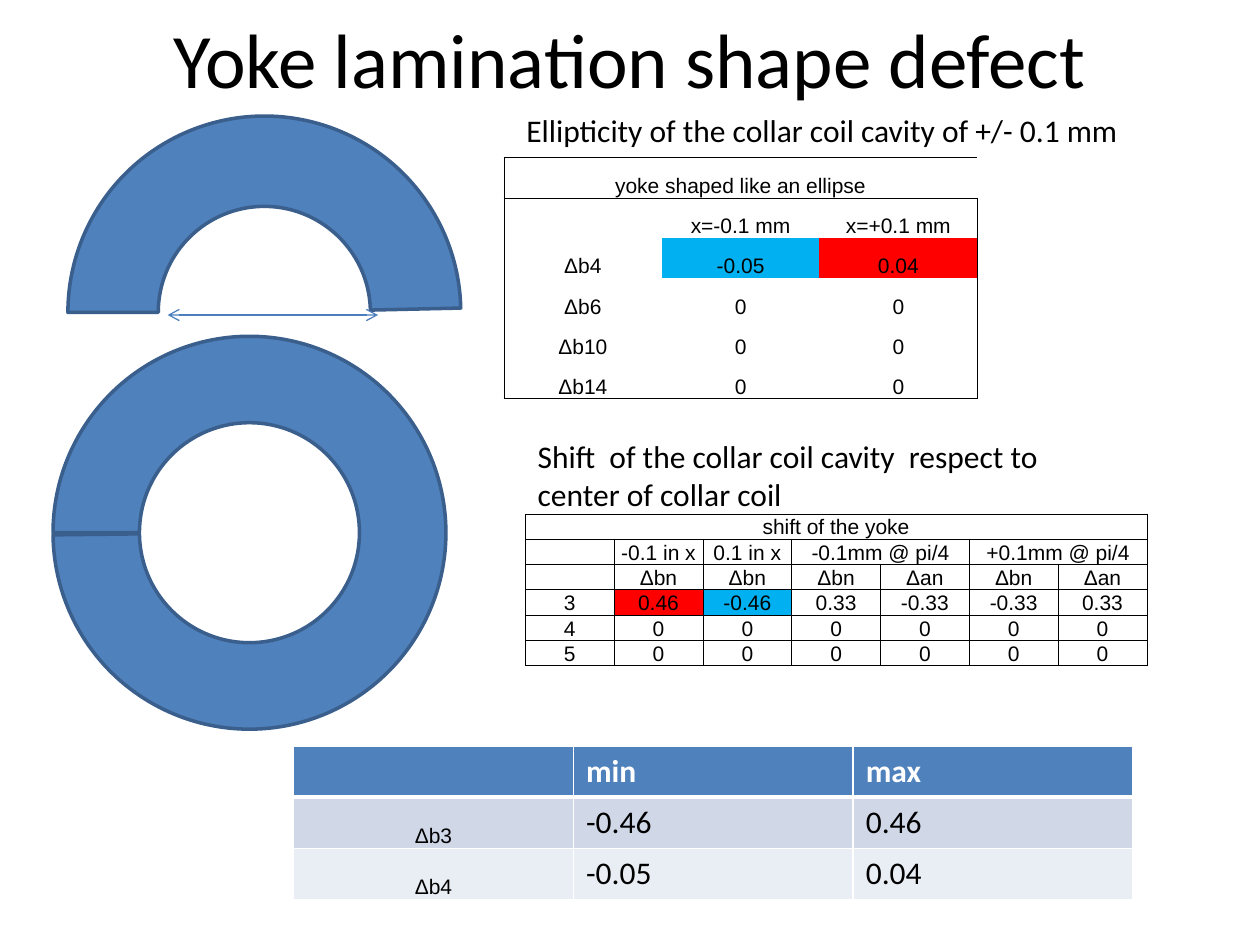
from lxml import etree
from pptx import Presentation
from pptx.dml.color import RGBColor
from pptx.enum.shapes import MSO_CONNECTOR, MSO_SHAPE
from pptx.enum.text import MSO_ANCHOR, PP_ALIGN
from pptx.oxml.ns import qn
from pptx.util import Cm, Pt

LEFT, MID = PP_ALIGN.LEFT, PP_ALIGN.CENTER
TOP, HALF, LOW = MSO_ANCHOR.TOP, MSO_ANCHOR.MIDDLE, MSO_ANCHOR.BOTTOM
ARC, LINE = MSO_SHAPE.BLOCK_ARC, MSO_CONNECTOR.STRAIGHT
HUES = {
    "ink": "000000", "paper": "FFFFFF", "steel": "4F81BD", "rim": "3A5F8C",
    "arrow": "4B7EBC", "low": "00B0F0", "high": "FF0000",
    "band": "D0D8E8", "pale": "E9EDF4",
}
SMALL = {"size": 12, "font": "Arial", "align": MID}
BODY = {"size": 18, "font": "Calibri"}
HEAD = {**BODY, "hue": "paper", "bold": True}


def tint(name):
    return RGBColor.from_string(HUES[name])


class Board:
    def __init__(self, slide):
        self.slide = slide
        self.shapes = slide.shapes

    def label(self, para, words, size, font, hue="ink", bold=False, align=LEFT):
        para.alignment = align
        if words:
            run = para.add_run()
            run.text = words
            run.font.size, run.font.name = Pt(size), font
            run.font.bold = bold
            run.font.color.rgb = tint(hue)
        else:
            etree.SubElement(para._p, qn("a:endParaRPr"), sz=str(size * 100))

    def text(self, box, lines, anchor=TOP, **style):
        frame = self.shapes.add_textbox(*map(Cm, box)).text_frame
        frame.word_wrap = True
        frame.vertical_anchor = anchor
        for i, words in enumerate(lines):
            para = frame.add_paragraph() if i else frame.paragraphs[0]
            self.label(para, words, **style)

    def ring(self, left, top, side, turns):
        arc = self.shapes.add_shape(ARC, *map(Cm, (left, top, side, side)))
        arc.shadow.inherit = False
        for i, turn in enumerate(turns):
            arc.adjustments[i] = turn
        arc.fill.solid()
        arc.fill.fore_color.rgb = tint("steel")
        arc.line.color.rgb = tint("rim")
        arc.line.width = Pt(2)

    def arrow(self, *ends):
        line = self.shapes.add_connector(LINE, *map(Cm, ends))
        line.line.color.rgb = tint("arrow")
        line.line.width = Pt(0.75)
        for tag in ("a:headEnd", "a:tailEnd"):
            etree.SubElement(line.line._ln, qn(tag), type="arrow")
        etree.SubElement(line._element.spPr, qn("a:effectLst"))

    def edge(self, cell, sides, hue):
        props = cell._tc.get_or_add_tcPr()
        for i, (side, width) in enumerate(zip("LRTB", sides)):
            line = etree.Element(qn("a:ln" + side), w=str(Pt(width)))
            if width:
                fill = etree.SubElement(line, qn("a:solidFill"))
                etree.SubElement(fill, qn("a:srgbClr"), val=HUES[hue])
            else:
                etree.SubElement(line, qn("a:noFill"))
            props.insert(i, line)

    def table(self, left, top, wide, high, rows, sides, look, fill, spans=(), hue="ink"):
        count = len(rows[0])
        box = map(Cm, (left, top, wide * count, high * len(rows)))
        grid = self.shapes.add_table(len(rows), count, *box).table
        grid.first_row = grid.horz_banding = False
        for col in grid.columns:
            col.width = Cm(wide)
        for r, row in enumerate(rows):
            grid.rows[r].height = Cm(high)
            for c, words in enumerate(row):
                cell, style = grid.cell(r, c), look(r, c)
                if style is SMALL:
                    cell.vertical_anchor = LOW
                    cell.margin_left = cell.margin_right = 0
                    cell.margin_top = cell.margin_bottom = 0
                self.label(cell.text_frame.paragraphs[0], words, **style)
                shade = fill(r, c)
                if shade:
                    cell.fill.solid()
                    cell.fill.fore_color.rgb = tint(shade)
                else:
                    cell.fill.background()
                self.edge(cell, sides(r, c), hue)
        for r, start, end in spans:
            grid.cell(r, start).merge(grid.cell(r, end))


def main():
    deck = Presentation()
    deck.slide_width, deck.slide_height = Cm(25.4), Cm(19.05)
    board = Board(deck.slides.add_slide(deck.slide_layouts[6]))

    board.text((1.27, -0.43, 22.86, 3.18), ["Yoke lamination shape defect"],
               HALF, size=44, font="Calibri", align=MID)
    board.ring(1.37, 2.34, 7.92, (108, 215.23, 0.23))
    board.text((10.36, 2.11, 12.57, 1.02),
               ["Ellipticity of the collar coil cavity of +/- 0.1 mm"], **BODY)
    board.arrow(3.38, 6.35, 7.62, 6.35)

    shape = [
        ["yoke shaped like an ellipse", "", ""],
        ["", "x=-0.1 mm", "x=+0.1 mm"],
        ["Δb4", "-0.05", "0.04"],
        *([name, "0", "0"] for name in ("Δb6", "Δb10", "Δb14")),
    ]
    marks = {(2, 1): "low", (2, 2): "high"}
    board.table(
        10.16, 3.18, 3.18, 0.81, shape,
        lambda r, c: [0.5 * on for on in (c == 0, c == 2, r < 2, r in (0, 5))],
        lambda r, c: SMALL, lambda r, c: marks.get((r, c)), [(0, 0, 2)])

    board.ring(1.07, 6.78, 7.92, (108, 107.63, 0.22))
    board.text((10.59, 8.69, 10.87, 1.8),
               ["Shift  of the collar coil cavity  respect to",
                "center of collar coil"], **BODY)

    shift = [
        ["shift of the yoke"] + [""] * 6,
        ["", "-0.1 in x", "0.1 in x", "-0.1mm @ pi/4", "", "+0.1mm @ pi/4", ""],
        ["", "Δbn", "Δbn", "Δbn", "Δan", "Δbn", "Δan"],
        ["3", "0.46", "-0.46", "0.33", "-0.33", "-0.33", "0.33"],
        *([name] + ["0"] * 6 for name in "45"),
    ]
    spots = {(3, 1): "high", (3, 2): "low"}
    board.table(
        10.59, 10.36, 1.79, 0.51, shift, lambda r, c: [0.5] * 4,
        lambda r, c: SMALL, lambda r, c: spots.get((r, c)),
        [(0, 0, 6), (1, 3, 4), (1, 5, 6)])

    limits = [["", "min", "max"], ["Δb3", "-0.46", "0.46"], ["Δb4", "-0.05", "0.04"]]
    board.table(
        5.92, 15.04, 5.64, 1.03, limits,
        lambda r, c: (1, 1, 3 if r == 1 else 1, 3 if r == 0 else 1),
        lambda r, c: HEAD if r == 0 else BODY if c else SMALL,
        lambda r, c: ("steel", "band", "pale")[r], hue="paper")

    deck.save("out.pptx")


if __name__ == "__main__":
    main()
